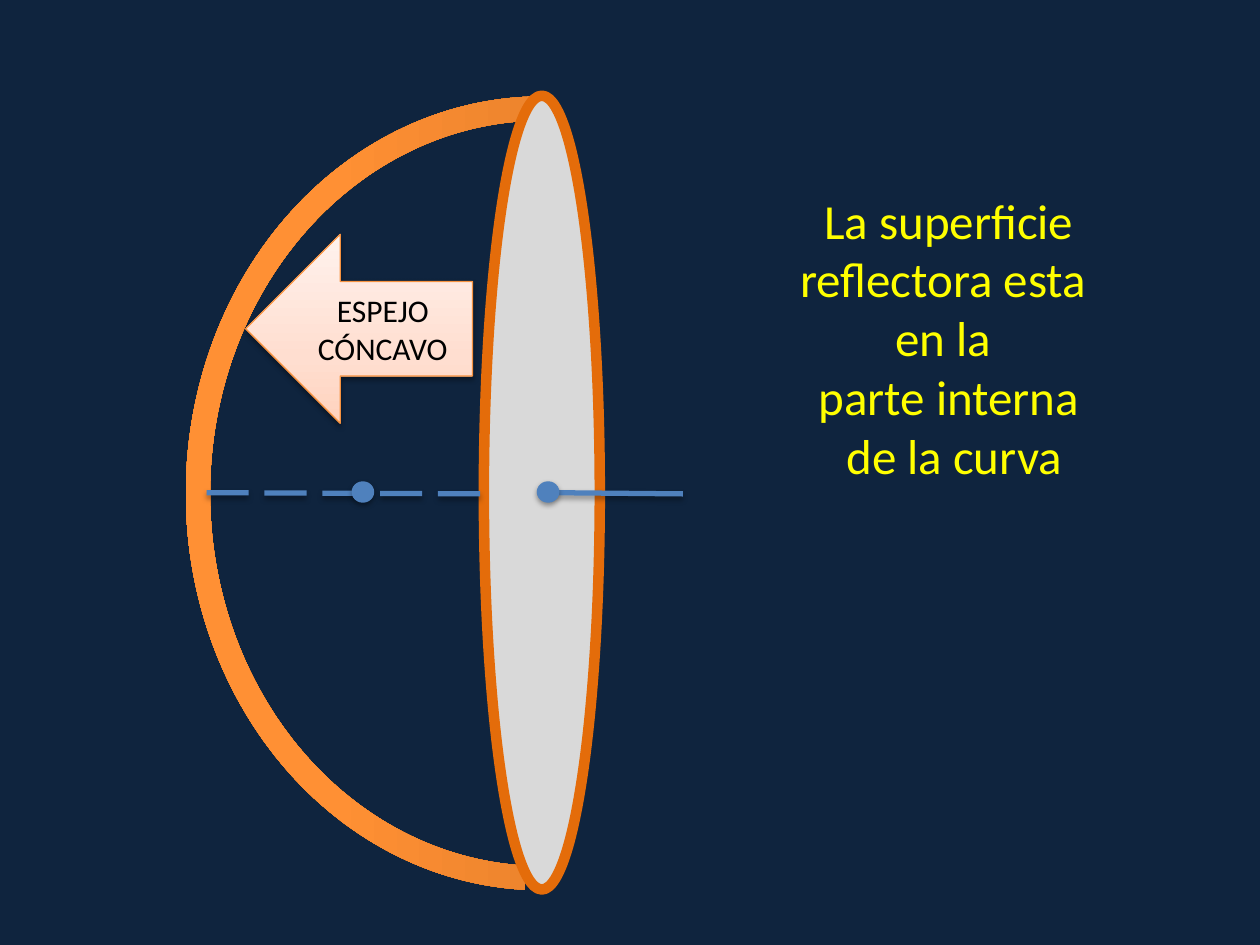
from copy import deepcopy
from typing import NamedTuple

from pptx import Presentation
from pptx.dml.color import RGBColor
from pptx.enum.dml import MSO_LINE
from pptx.enum.shapes import MSO_CONNECTOR, MSO_SHAPE
from pptx.enum.text import MSO_ANCHOR, MSO_AUTO_SIZE, PP_ALIGN
from pptx.oxml import parse_xml
from pptx.oxml.ns import nsdecls, qn
from pptx.util import Inches, Pt

NAVY = RGBColor(0x0F, 0x24, 0x3E)
GRAY = RGBColor(0xD9, 0xD9, 0xD9)
ORANGE = RGBColor(0xE4, 0x6C, 0x0A)
ARROW_EDGE = RGBColor(0xF6, 0x92, 0x40)
BLUE = RGBColor(0x4F, 0x81, 0xBD)
BLACK = RGBColor(0, 0, 0)
YELLOW = RGBColor(0xFF, 0xFF, 0)
FONT = "Calibri"
AXIS_TOP = 3.91


class Stop(NamedTuple):
    position: float
    color: RGBColor


class AxisPart(NamedTuple):
    start: float
    end: float
    dash: MSO_LINE | None


MIRROR_STOPS = [
    Stop(0, RGBColor(0xCC, 0x6E, 0x20)),
    Stop(0.8, RGBColor(0xFF, 0x90, 0x34)),
    Stop(1, RGBColor(0xFF, 0x91, 0x36)),
]
ARROW_STOPS = [
    Stop(0, RGBColor(0xFF, 0xD2, 0xBD)),
    Stop(0.35, RGBColor(0xFF, 0xDE, 0xD0)),
    Stop(1, RGBColor(0xFF, 0xF2, 0xED)),
]
AXIS_PARTS = [AxisPart(1.64, 3.84, MSO_LINE.LONG_DASH), AxisPart(4.36, 5.42, None)]
POINT_LEFTS = [4.26, 2.79]
EXPLANATION = [
    "La superficie reflectora esta ",
    "en la ",
    "parte interna",
    " de la curva",
]


def add_shadow(shape, opacity: int, distance: float) -> None:
    shape._element.spPr.append(parse_xml(
        f'<a:effectLst {nsdecls("a")}><a:outerShdw blurRad="{Pt(3.1)}" '
        f'dist="{Pt(distance)}" dir="5400000" rotWithShape="0">'
        f'<a:srgbClr val="{BLACK}"><a:alpha val="{opacity * 1000}"/></a:srgbClr>'
        '</a:outerShdw></a:effectLst>'
    ))


def fill_gradient(shape, stops: list[Stop]) -> None:
    shape.fill.gradient()
    shape.fill.gradient_angle = 90
    stop_list = shape._element.spPr.find(".//" + qn("a:gsLst"))
    stop_list.insert(1, deepcopy(stop_list[0]))
    for gradient_stop, stop in zip(shape.fill.gradient_stops, stops):
        gradient_stop.position = stop.position
        gradient_stop.color.rgb = stop.color


def write_centered(text_frame, lines: list[str], size: int, color: RGBColor) -> None:
    text_frame.word_wrap = True
    text_frame.text = "\n".join(lines)
    for paragraph in text_frame.paragraphs:
        paragraph.alignment = PP_ALIGN.CENTER
        for run in paragraph.runs:
            run.font.name = FONT
            run.font.size = Pt(size)
            run.font.color.rgb = color


def add_mirror(slide) -> None:
    arc = slide.shapes.add_shape(
        MSO_SHAPE.BLOCK_ARC, Inches(1.15), Inches(1.09), Inches(6.3), Inches(5.65))
    arc.rotation = 270
    for index, value in enumerate((109.48, 0, 0.034)):
        arc.adjustments[index] = value
    fill_gradient(arc, MIRROR_STOPS)
    arc.line.fill.background()
    arc.shadow.inherit = False

    opening = slide.shapes.add_shape(
        MSO_SHAPE.OVAL, Inches(3.84), Inches(0.76), Inches(0.92), Inches(6.3))
    opening.fill.solid()
    opening.fill.fore_color.rgb = GRAY
    opening.line.color.rgb = ORANGE
    opening.line.width = Pt(6)
    opening.shadow.inherit = False


def add_axis_part(slide, part: AxisPart) -> None:
    connector = slide.shapes.add_connector(
        MSO_CONNECTOR.STRAIGHT, Inches(part.start), Inches(AXIS_TOP),
        Inches(part.end), Inches(AXIS_TOP + 0.01))
    connector.line.color.rgb = BLUE
    connector.line.width = Pt(3)
    if part.dash is not None:
        connector.line.dash_style = part.dash
    add_shadow(connector, 35, 1.8)


def add_point(slide, left: float) -> None:
    point = slide.shapes.add_shape(
        MSO_SHAPE.FLOWCHART_CONNECTOR, Inches(left), Inches(3.82),
        Inches(0.18), Inches(0.17))
    point.fill.solid()
    point.fill.fore_color.rgb = BLUE
    point.line.fill.background()
    add_shadow(point, 38, 1.6)


def add_mirror_arrow(slide) -> None:
    arrow = slide.shapes.add_shape(
        MSO_SHAPE.RIGHT_ARROW, Inches(1.95), Inches(1.86), Inches(1.8), Inches(1.5))
    arrow.rotation = 180
    arrow._element.spPr.xfrm.set("flipV", "1")
    fill_gradient(arrow, ARROW_STOPS)
    arrow.line.color.rgb = ARROW_EDGE
    arrow.line.width = Pt(0.75)
    add_shadow(arrow, 38, 1.6)
    arrow.text_frame.vertical_anchor = MSO_ANCHOR.MIDDLE
    write_centered(arrow.text_frame, ["ESPEJO CÓNCAVO"], 18, BLACK)


def add_explanation(slide) -> None:
    text_box = slide.shapes.add_textbox(
        Inches(6.2), Inches(1.46), Inches(2.66), Inches(4.34))
    write_centered(text_box.text_frame, EXPLANATION, 28, YELLOW)
    text_box.text_frame.auto_size = MSO_AUTO_SIZE.SHAPE_TO_FIT_TEXT


def main() -> None:
    """Build the slide that explains a concave mirror."""
    presentation = Presentation()
    presentation.slide_width = Inches(10)
    presentation.slide_height = Inches(7.5)
    slide = presentation.slides.add_slide(presentation.slide_layouts[6])
    slide.background.fill.solid()
    slide.background.fill.fore_color.rgb = NAVY
    add_mirror(slide)
    for part in AXIS_PARTS:
        add_axis_part(slide, part)
    for left in POINT_LEFTS:
        add_point(slide, left)
    add_mirror_arrow(slide)
    add_explanation(slide)
    presentation.save("out.pptx")


if __name__ == "__main__":
    main()
